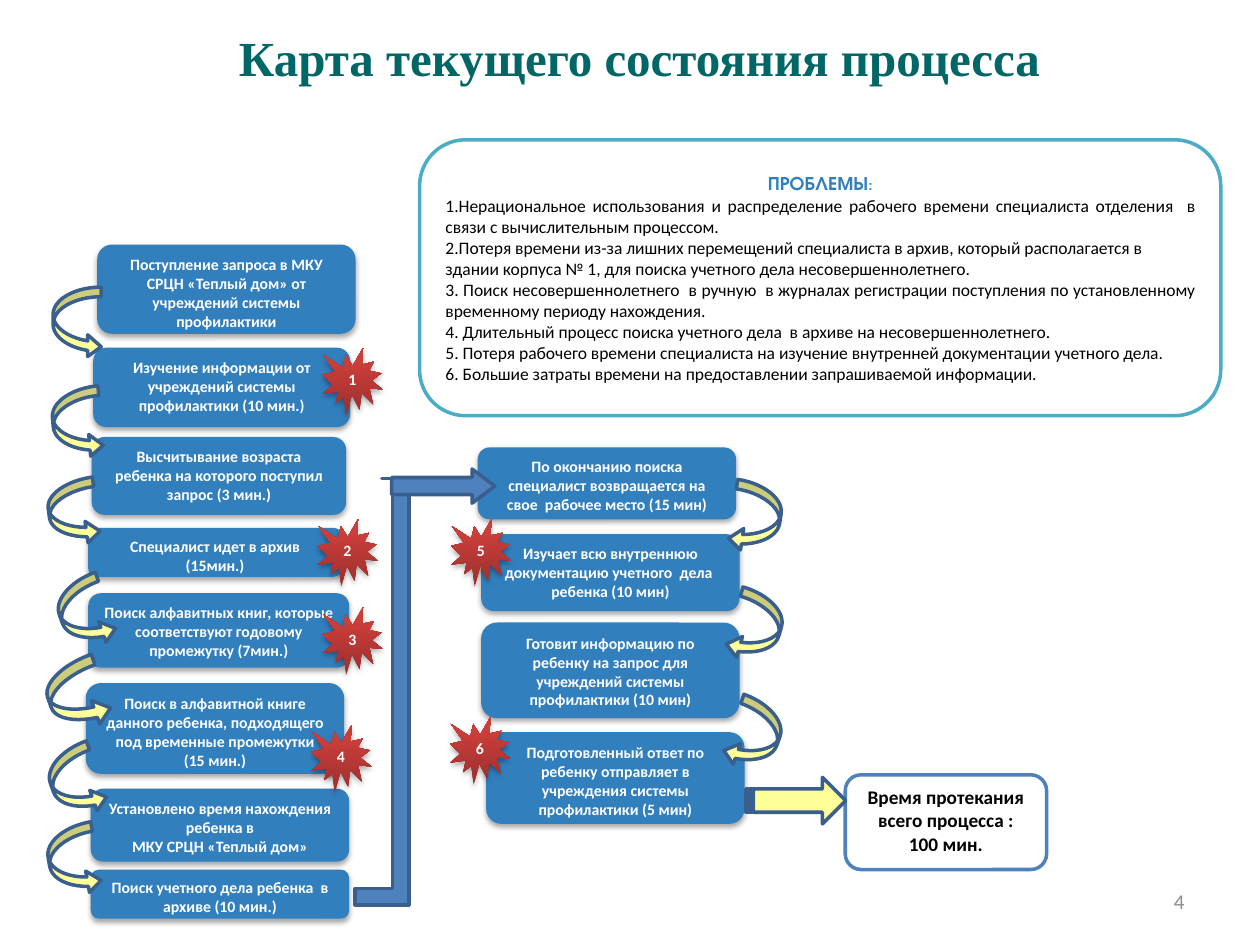
import pptx
import pptx.dml.color
import pptx.enum.shapes
import pptx.enum.text
import pptx.oxml
import pptx.oxml.ns
import pptx.util
from pptx.util import Cm, Pt

SHAPES = pptx.enum.shapes.MSO_SHAPE
ALIGN = pptx.enum.text.PP_ALIGN
ANCHOR = pptx.enum.text.MSO_ANCHOR
COLORS = {
    "title": "006666", "step": "327FBE", "white": "FFFFFF", "black": "000000",
    "yellow": "FFFF99", "outline": "3A5F8C", "route": "4F81BD", "frame": "4BACC6",
    "seal_dark": "9C2F2D", "seal_light": "CB3E3A", "number": "8C8C8C",
}
SHADOW = (
    f'<a:effectLst {pptx.oxml.ns.nsdecls("a")}>'
    '<a:outerShdw blurRad="40000" dist="23000" dir="5400000" rotWithShape="0">'
    '<a:srgbClr val="000000"><a:alpha val="35000"/></a:srgbClr>'
    '</a:outerShdw></a:effectLst>'
)
CURVE_ADJUSTMENTS = (0.199, 0.45, 0.279)

REQUEST_STEPS = [
    (0.23, 0, 5.21, 1.8, ["Поступление запроса в МКУ СРЦН «Теплый дом» от учреждений системы профилактики"]),
    (0.15, 2.08, 5.18, 1.6, ["Изучение информации от учреждений системы профилактики (10 мин.)"]),
    (0.12, 3.88, 5.13, 1.57, ["Высчитывание возраста ребенка на которого поступил запрос (3 мин.)"]),
    (0.05, 5.71, 5.11, 0.99, ["Специалист идет в архив (15мин.)"]),
    (0.05, 7.03, 5.26, 1.5, ["Поиск алфавитных книг, которые соответствуют годовому промежутку (7мин.)"]),
    (0, 8.84, 5.21, 1.83, ["Поиск в алфавитной книге данного ребенка, подходящего под временные промежутки", "(15 мин.)"]),
    (0.1, 10.97, 5.21, 1.47, ["Установлено время нахождения ребенка в", "МКУ СРЦН «Теплый дом»"]),
    (0.1, 12.6, 5.21, 0.99, ["Поиск учетного дела ребенка  в архиве (10 мин.)"]),
]
REQUEST_ARROWS = [
    (-0.66, 0.86, 0.97, 1.42, 0), (-0.66, 2.89, 0.97, 1.42, -5.1),
    (-0.74, 4.75, 0.97, 1.32, -8.1), (-0.51, 6.73, 0.97, 1.42, -19.8),
    (-0.74, 8.41, 1.12, 1.4, -19.8), (-0.69, 10.13, 0.97, 1.42, -19.8),
    (-0.74, 11.71, 0.97, 1.42, -10),
]
REQUEST_SEALS = [("1", 4.77, 2.08), ("2", 4.67, 5.53), ("3", 4.77, 7.31), ("4", 4.54, 9.68)]

ANSWER_STEPS = [
    (0, 0, 5.21, 1.45, ["По окончанию поиска специалист возвращается на свое  рабочее место (15 мин)"]),
    (0.07, 1.75, 5.21, 1.55, ["Изучает всю внутреннюю документацию учетного  дела  ребенка (10 мин)"]),
    (0.07, 3.53, 5.21, 1.93, ["Готовит информацию по ребенку на запрос для учреждений системы профилактики (10 мин)"]),
    (0.17, 5.74, 5.21, 1.85, ["Подготовленный ответ по ребенку отправляет в учреждения системы профилактики (5 мин)"]),
]
ANSWER_ARROWS = [
    (5.13, 0.71, 0.97, 1.42, 8.8), (5.13, 2.92, 0.97, 1.42, 16.3), (5.1, 5.1, 0.97, 1.42, 19.8),
]
ANSWER_SEALS = [("5", -0.54, 1.44), ("6", -0.56, 5.43)]

PROBLEMS = [
    ("1.Нерациональное использования и распределение рабочего времени специалиста отделения  в связи с вычислительным процессом.", ALIGN.JUSTIFY),
    ("2.Потеря времени из-за лишних перемещений специалиста в архив, который располагается в здании корпуса № 1, для поиска учетного дела несовершеннолетнего.", ALIGN.LEFT),
    ("3. Поиск несовершеннолетнего  в ручную  в журналах регистрации поступления по установленному временному периоду нахождения.", ALIGN.JUSTIFY),
    ("4. Длительный процесс поиска учетного дела  в архиве на несовершеннолетнего.", ALIGN.JUSTIFY),
    ("5. Потеря рабочего времени специалиста на изучение внутренней документации учетного дела.", ALIGN.JUSTIFY),
    ("6. Большие затраты времени на предоставлении запрашиваемой информации.", ALIGN.JUSTIFY),
]


def rgb(name):
    """Return the named colour."""
    return pptx.dml.color.RGBColor.from_string(COLORS[name])


def add_block(slide, kind, box, fill, line=None, adjustments=(), rotation=0):
    """Add a preset shape with a plain fill and an optional 2 pt outline."""
    shape = slide.shapes.add_shape(kind, *map(Cm, box))
    shape.shadow.inherit = False
    shape.fill.solid()
    shape.fill.fore_color.rgb = rgb(fill)
    if line:
        shape.line.color.rgb = rgb(line)
        shape.line.width = Pt(2)
    else:
        shape.line.fill.background()
    for index, value in enumerate(adjustments):
        shape.adjustments[index] = value
    shape.rotation = rotation
    return shape


def add_shadow(shape):
    """Give the shape a soft shadow below it."""
    properties = shape.element.spPr
    properties.remove(properties.find(pptx.oxml.ns.qn("a:effectLst")))
    properties.append(pptx.oxml.parse_xml(SHADOW))


def write(shape, paragraphs, anchor=ANCHOR.TOP):
    """Write (alignment, runs) paragraphs; a run is text, size, colour, bold, font."""
    frame = shape.text_frame
    frame.word_wrap = True
    frame.vertical_anchor = anchor
    for index, (alignment, runs) in enumerate(paragraphs):
        paragraph = frame.add_paragraph() if index else frame.paragraphs[0]
        paragraph.alignment = alignment
        for text, size, color, bold, font in runs:
            run = paragraph.add_run()
            run.text = text
            run.font.size = Pt(size)
            run.font.color.rgb = rgb(color)
            run.font.bold = bold
            run.font.name = font


def add_seal(slide, left, top, number):
    """Add a numbered red burst."""
    seal = add_block(slide, SHAPES.EXPLOSION1, (left, top, 1.22, 1.37), "seal_light")
    seal.fill.gradient()
    seal.fill.gradient_angle = 90
    for stop, color, position in zip(seal.fill.gradient_stops, ("seal_dark", "seal_light"), (0, 0.8)):
        stop.color.rgb = rgb(color)
        stop.position = position
    add_shadow(seal)
    seal.text_frame.margin_left = seal.text_frame.margin_right = 0
    write(seal, [(ALIGN.CENTER, [(number, 9, "white", True, "Calibri")])], ANCHOR.MIDDLE)


def add_process_column(slide, left, top, steps, arrows, seals, mirrored=False):
    """Add a column of steps, the curved arrows beside it and its problem marks."""
    for x, y, width, height, lines in steps:
        step = add_block(slide, SHAPES.ROUNDED_RECTANGLE, (left + x, top + y, width, height), "step")
        add_shadow(step)
        write(step, [(ALIGN.CENTER, [(text, 9, "white", True, "Calibri")]) for text in lines])
    for x, y, width, height, rotation in arrows:
        arrow = add_block(slide, SHAPES.CURVED_RIGHT_ARROW, (left + x, top + y, width, height),
                          "yellow", "outline", CURVE_ADJUSTMENTS, rotation)
        if mirrored:
            arrow.element.spPr.find(pptx.oxml.ns.qn("a:xfrm")).set("flipH", "1")
    for number, x, y in seals:
        add_seal(slide, left + x, top + y, number)


def add_route(slide, left, top):
    """Add the bent arrow leading from the first column to the second."""
    add_block(slide, SHAPES.BENT_UP_ARROW, (left, top + 0.89, 1.3, 8.59), "route", "outline", (0.25, 0.293, 0))
    add_block(slide, SHAPES.UP_ARROW, (left + 1.43, top, 0.69, 2.08), "route", "outline", (0.5, 0.665), 90)


def add_total(slide, left, top):
    """Add the total time and the arrow leading to it."""
    total = add_block(slide, SHAPES.ROUNDED_RECTANGLE, (left + 2, top, 4.06, 1.91), "white", "route")
    write(total, [(ALIGN.CENTER, [("Время протекания всего процесса : 100 мин.", 11, "black", True, "Calibri")])])
    add_block(slide, SHAPES.STRIPED_RIGHT_ARROW, (left, top + 0.05, 2.01, 0.94), "yellow", "outline")


def add_problems(slide, box):
    """Add the framed list of problems."""
    frame = add_block(slide, SHAPES.ROUNDED_RECTANGLE, box, "white", "frame")
    heading = [("ПРОБЛЕМЫ", 11, "step", True, "TeX Gyre Adventor"), (":", 8, "step", True, "TeX Gyre Adventor")]
    items = [(alignment, [(text, 10, "black", False, "Calibri")]) for text, alignment in PROBLEMS]
    write(frame, [(ALIGN.CENTER, heading)] + items, ANCHOR.MIDDLE)


def add_label(slide, box, alignment, run, anchor=ANCHOR.TOP):
    """Add a one-line text box."""
    write(slide.shapes.add_textbox(*map(Cm, box)), [(alignment, [run])], anchor)


def main():
    """Build and save the presentation."""
    presentation = pptx.Presentation()
    presentation.slide_width, presentation.slide_height = Cm(25.4), Cm(19.05)
    slide = presentation.slides.add_slide(presentation.slide_layouts[6])
    add_label(slide, (18.21, 17.65, 5.92, 1.02), ALIGN.RIGHT, ("4", 12, "number", False, "Calibri"), ANCHOR.MIDDLE)
    add_label(slide, (4.09, 0.43, 17.6, 1.45), ALIGN.CENTER,
              ("Карта текущего состояния процесса", 28, "title", True, "Times New Roman"))
    add_process_column(slide, 1.73, 4.93, REQUEST_STEPS, REQUEST_ARROWS, REQUEST_SEALS)
    add_process_column(slide, 9.63, 9.02, ANSWER_STEPS, ANSWER_ARROWS, ANSWER_SEALS, mirrored=True)
    add_total(slide, 15.04, 15.62)
    add_route(slide, 7.16, 8.76)
    add_problems(slide, (8.46, 2.82, 16.15, 5.56))
    presentation.save("out.pptx")


if __name__ == "__main__":
    main()
